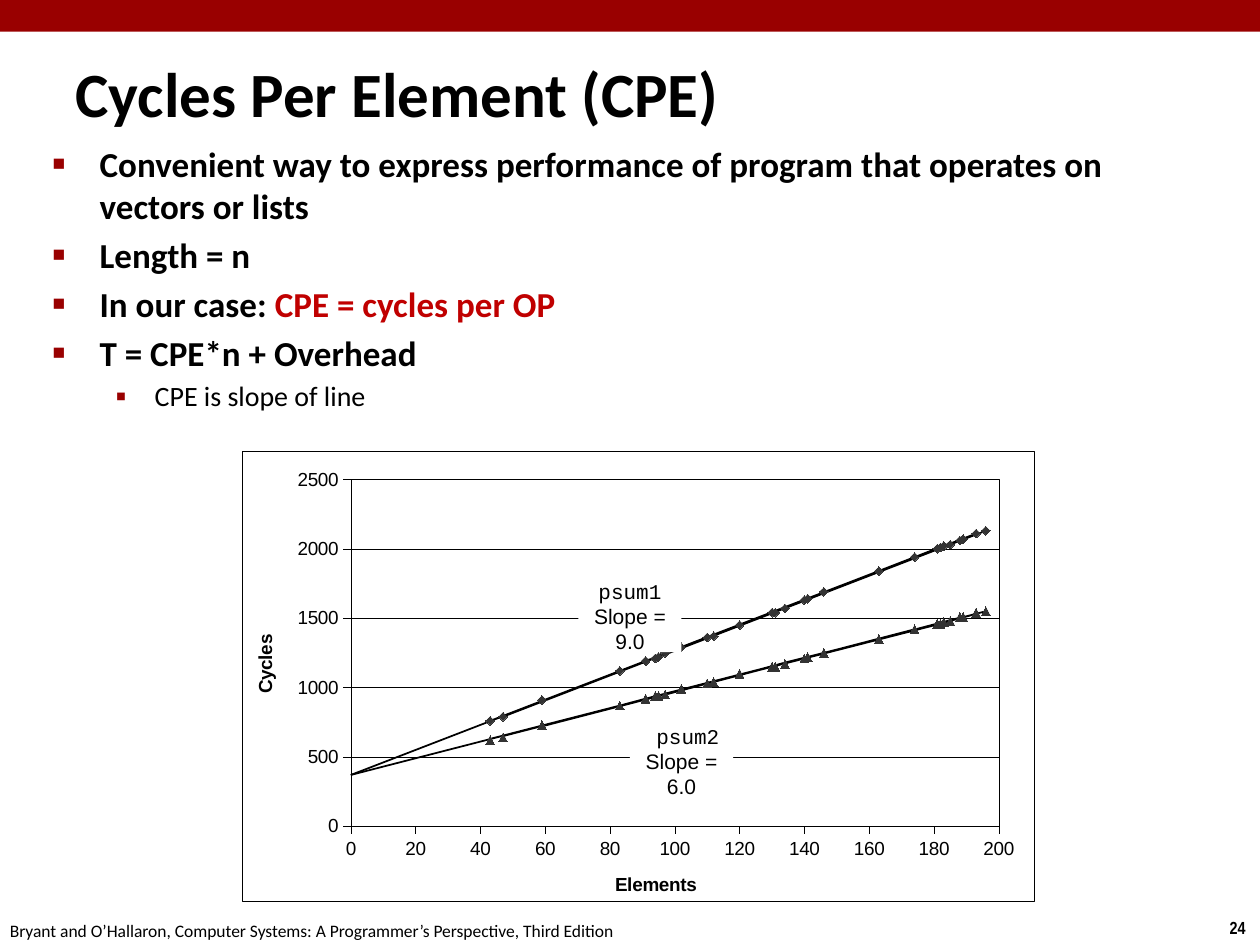
from dataclasses import dataclass
from typing import Optional

import pptx
import pptx.chart.data
import pptx.dml.color
import pptx.enum.chart
import pptx.enum.shapes
import pptx.enum.text
import pptx.oxml
import pptx.oxml.ns
import pptx.util
from pptx.util import Cm, Pt

RGBColor = pptx.dml.color.RGBColor
BLACK = RGBColor(0, 0, 0)
WHITE = RGBColor(0xFF, 0xFF, 0xFF)
CRIMSON = RGBColor(0x99, 0, 0)
RED = RGBColor(0xC0, 0, 0)
GREY = RGBColor(0x33, 0x33, 0x33)
HAIRLINE = ('<a:ln w="3175"><a:solidFill><a:srgbClr val="000000"/></a:solidFill></a:ln>')
MARKER = pptx.enum.chart.XL_MARKER_STYLE
LEFT = pptx.enum.text.PP_ALIGN.LEFT
CENTER = pptx.enum.text.PP_ALIGN.CENTER


@dataclass
class Run:
    text: str
    size: float
    font: str = "Calibri"
    color: RGBColor = BLACK
    bold: bool = False


@dataclass
class Bullet:
    runs: list[Run]
    margin: float
    indent: float
    char: str
    percent: int
    level: int = 0


@dataclass
class SlopeLabel:
    left: float
    top: float
    name: str
    slope: str


@dataclass
class Series:
    name: str
    values: list[Optional[int]]
    marker: Optional[MARKER] = None


def point(text: str, char: str = "■", **fmt) -> Bullet:
    return Bullet([Run(text, 20, bold=True, **fmt)], 0.95, -0.95, char, 60)


BULLETS = [
    point("Convenient way to express performance of program that operates on vectors or lists"),
    point("Length = n"),
    point("In our case: "),
    point("T = CPE*n + Overhead"),
    Bullet([Run("CPE is slope of line", 16)], 2.06, -0.79, "▪", 110, 1),
]
BULLETS[2].runs.append(Run("CPE = cycles per OP", 20, color=RED, bold=True))

LABELS = [
    SlopeLabel(11.66, 11.58, "psum1", "Slope = 9.0"),
    SlopeLabel(12.7, 14.5, " psum2", "Slope = 6.0"),
]

ELEMENTS = [0, 193, 120, 91, 95, 196, 97, 181, 91, 83, 43, 183, 140, 146, 94, 134, 163, 131,
            110, 182, 189, 112, 141, 185, 188, 47, 130, 102, 59, 174]
SERIES = [
    Series("Series 1", [None, 2110, 1450, 1190, 1220, 2130, 1250, 2000, 1190, 1120, 760, 2020,
                        1630, 1690, 1210, 1570, 1840, 1540, 1360, 2010, 2070, 1370, 1640, 2030,
                        2060, 790, 1540, 1290, 910, 1940], MARKER.DIAMOND),
    Series("Series 2", [370, 2110, 1450, 1190, 1220, 2130, 1240, 2000, 1190, 1120, 760, 2020,
                        1630, 1680, 1220, 1580, 1840, 1550, 1360, 2010, 2070, 1380, 1640, 2040,
                        2060, 790, 1540, 1290, 900, 1940]),
    Series("Series 3", [None, 1540, 1100, 920, 940, 1550, 950, 1460, 920, 870, 620, 1470,
                        1210, 1250, 940, 1170, 1350, 1150, 1030, 1460, 1510, 1040, 1220, 1480,
                        1510, 640, 1150, 990, 730, 1420], MARKER.TRIANGLE),
    Series("Series 4", [370, 1530, 1090, 920, 940, 1550, 950, 1460, 920, 870, 630, 1470,
                        1210, 1250, 930, 1180, 1350, 1160, 1030, 1460, 1510, 1040, 1220, 1480,
                        1500, 650, 1150, 980, 720, 1420]),
]


def set_attrs(obj, **values) -> None:
    for name, value in values.items():
        setattr(obj, name, value)


def parse(xml: str):
    """Make an element from XML that uses the a: and c: prefixes."""
    head, sep, tail = xml.partition(">")
    slash = "/" if head.endswith("/") else ""
    head = head.removesuffix("/")
    return pptx.oxml.parse_xml(f"{head} {pptx.oxml.ns.nsdecls('a', 'c')}{slash}{sep}{tail}")


def add_run(p, run: Run) -> None:
    r = p.add_run()
    r.text = run.text
    set_attrs(r.font, size=Pt(run.size), name=run.font, bold=run.bold)
    r.font.color.rgb = run.color


def add_rect(s, box: tuple, color: RGBColor):
    sp = s.shapes.add_shape(pptx.enum.shapes.MSO_SHAPE.RECTANGLE, *map(Cm, box))
    sp.shadow.inherit = False
    sp.fill.solid()
    sp.fill.fore_color.rgb = color
    sp.line.fill.background()
    return sp


def add_line_of_text(s, box: tuple, run: Run) -> None:
    tf = s.shapes.add_textbox(*map(Cm, box)).text_frame
    tf.word_wrap = False
    add_run(tf.paragraphs[0], run)


def set_indent(p, margin: float, indent: float):
    pPr = p._p.get_or_add_pPr()
    pPr.set("marL", str(Cm(margin)))
    pPr.set("indent", str(Cm(indent)))
    return pPr


def add_bullet(p, b: Bullet) -> None:
    set_attrs(p, level=b.level, space_before=Pt(0.2 * b.runs[0].size))
    pPr = set_indent(p, b.margin, b.indent)
    for xml in (f'<a:buClr><a:srgbClr val="{CRIMSON}"/></a:buClr>',
                f'<a:buSzPct val="{b.percent * 1000}"/>',
                '<a:buFont typeface="Arial"/>',
                f'<a:buChar char="{b.char}"/>'):
        pPr.append(parse(xml))
    for run in b.runs:
        add_run(p, run)


def add_slope_label(s, label: SlopeLabel) -> None:
    tf = add_rect(s, (label.left, label.top, 2.08, 1.57), WHITE).text_frame
    set_attrs(tf, word_wrap=True, margin_left=Cm(0.08), margin_right=Cm(0.08),
              margin_top=Cm(0.08), margin_bottom=0,
              vertical_anchor=pptx.enum.text.MSO_ANCHOR.TOP)
    lines = [Run(label.name, 12, "Courier New"), Run(label.slope, 12, "Arial")]
    for p, run in zip((tf.paragraphs[0], tf.add_paragraph()), lines):
        p.alignment = CENTER
        add_run(p, run)


def format_axis(axis, title: str, maximum: int, step: int, grid: bool) -> None:
    set_attrs(axis, minimum_scale=0, maximum_scale=maximum, major_unit=step,
              has_major_gridlines=grid, has_title=True,
              major_tick_mark=pptx.enum.chart.XL_TICK_MARK.OUTSIDE)
    add_run(axis.axis_title.text_frame.paragraphs[0], Run(title, 10.8, "Arial", bold=True))
    lines = [axis.format.line] + ([axis.major_gridlines.format.line] if grid else [])
    for line in lines:
        line.color.rgb = BLACK
        line.width = Pt(0.25)


def format_series(ser, marker: Optional[MARKER]) -> None:
    ser.smooth = False
    if marker is None:
        ser.marker.style = MARKER.NONE
        ser.format.line.color.rgb = BLACK
        ser.format.line.width = Pt(1)
        return
    ser.format.line.fill.background()
    set_attrs(ser.marker, style=marker, size=5)
    ser.marker.format.fill.solid()
    ser.marker.format.fill.fore_color.rgb = GREY
    ser.marker.format.line.color.rgb = GREY


def add_cycles_chart(s) -> None:
    data = pptx.chart.data.XyChartData()
    for series in SERIES:
        ser = data.add_series(series.name)
        for x, y in zip(ELEMENTS, series.values):
            ser.add_data_point(x, y)
    chart = s.shapes.add_chart(pptx.enum.chart.XL_CHART_TYPE.XY_SCATTER_LINES,
                               *map(Cm, (4.88, 9.09, 15.98, 9.09)), data).chart
    set_attrs(chart, has_legend=False, has_title=False)
    set_attrs(chart.font, size=Pt(10.8), name="Arial")
    chart.font.color.rgb = BLACK
    plot = chart.plots[0]
    plot.vary_by_categories = False
    for ser, series in zip(plot.series, SERIES):
        format_series(ser, series.marker)
    format_axis(chart.category_axis, "Elements", 200, 20, False)
    format_axis(chart.value_axis, "Cycles", 2500, 500, True)

    area = chart._chartSpace.chart.plotArea
    for old in area.findall(pptx.oxml.ns.qn("c:layout")):
        area.remove(old)
    places = "".join(f'<c:{k} val="{v}"/>' for k, v in (
        ("layoutTarget", "inner"), ("xMode", "edge"), ("yMode", "edge"),
        ("x", 0.137), ("y", 0.063), ("w", 0.818), ("h", 0.77)))
    area.insert(0, parse(f"<c:layout><c:manualLayout>{places}</c:manualLayout></c:layout>"))
    area.append(parse(f"<c:spPr><a:noFill/>{HAIRLINE}</c:spPr>"))
    chart._chartSpace.chart.addnext(parse(
        f'<c:spPr><a:solidFill><a:srgbClr val="{WHITE}"/></a:solidFill>{HAIRLINE}</c:spPr>'))


def main() -> None:
    prs = pptx.Presentation()
    set_attrs(prs, slide_width=Cm(25.4), slide_height=Cm(19.05))
    s = prs.slides.add_slide(prs.slide_layouts[5])
    add_rect(s, (0, 0, 25.4, 0.64), CRIMSON)
    add_line_of_text(s, (24.54, 18.36, 0.86, 0.69), Run("24", 10, "Arial Narrow", bold=True))
    add_line_of_text(s, (-0.05, 18.42, 12.9, 0.69), Run(
        "Bryant and O’Hallaron, Computer Systems: A Programmer’s Perspective, Third Edition", 10))

    title = s.shapes.title
    set_attrs(title, left=Cm(1.27), top=Cm(1.07), width=Cm(22.61), height=Cm(1.6))
    title.text_frame.vertical_anchor = pptx.enum.text.MSO_ANCHOR.MIDDLE
    p = title.text_frame.paragraphs[0]
    p.alignment = LEFT
    set_indent(p, 0.33, -0.33)
    add_run(p, Run("Cycles Per Element (CPE)", 36, bold=True))

    tf = s.shapes.add_textbox(*map(Cm, (0.81, 2.74, 23.09, 4.22))).text_frame
    tf.word_wrap = True
    for i, bullet in enumerate(BULLETS):
        add_bullet(tf.add_paragraph() if i else tf.paragraphs[0], bullet)

    add_cycles_chart(s)
    for label in LABELS:
        add_slope_label(s, label)
    prs.save("out.pptx")


if __name__ == "__main__":
    main()
